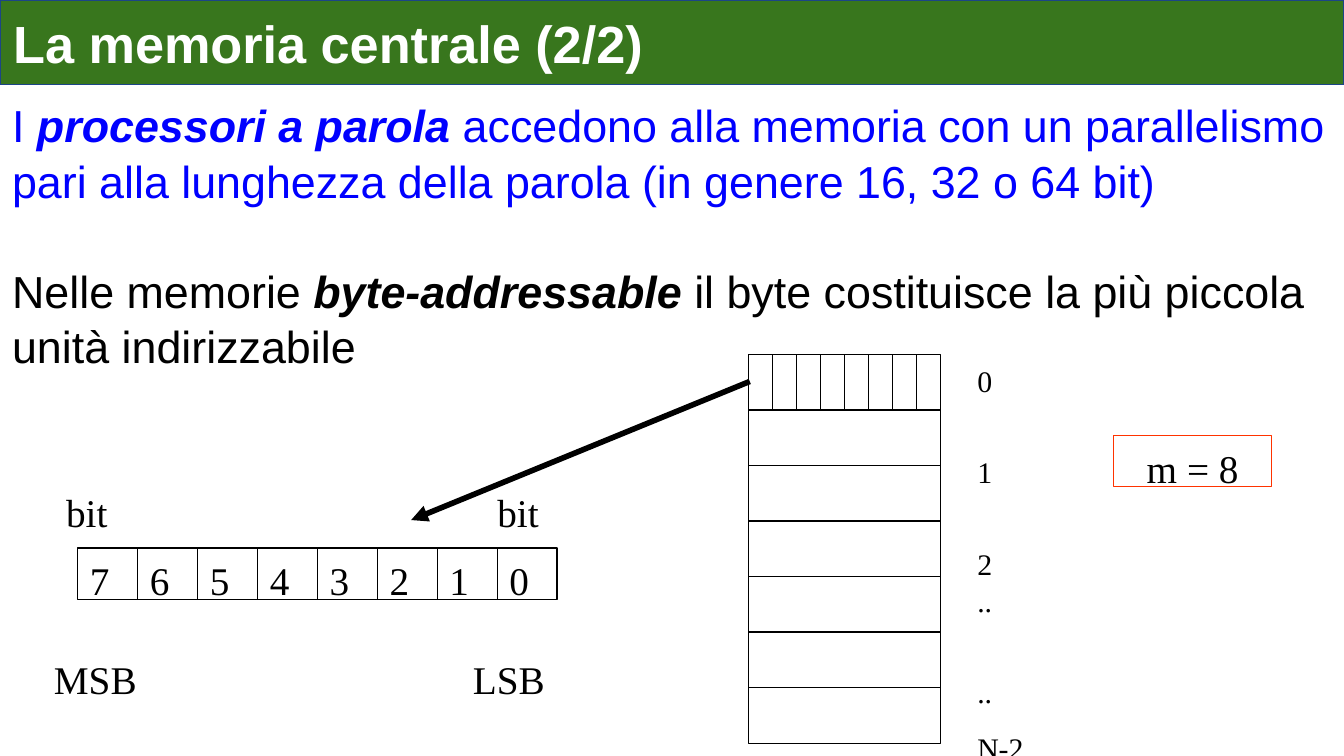
import pptx
import pptx.dml.color
import pptx.enum.shapes
import pptx.enum.text
import pptx.oxml
import pptx.oxml.ns
import pptx.util

Cm = pptx.util.Cm
Pt = pptx.util.Pt
RECTANGLE = pptx.enum.shapes.MSO_SHAPE.RECTANGLE
ALIGN = pptx.enum.text.PP_ALIGN
ANCHOR = pptx.enum.text.MSO_ANCHOR

COLORS = {
    "black": "000000",
    "white": "FFFFFF",
    "blue": "0000FF",
    "green": "38761D",
    "navy": "1C4587",
    "red": "FF3300",
}
TITLE_FONT = {"name": "Arial", "size": Pt(28), "bold": True}
BODY_FONT = {"name": "Arial", "size": Pt(24)}
DIAGRAM_FONT = {"name": "Times New Roman", "size": Pt(21)}
ADDRESS_FONT = {"name": "Times New Roman", "size": Pt(16)}
EMPHASIS = {"bold": True, "italic": True}
FRAME = {
    "word_wrap": True,
    "vertical_anchor": ANCHOR.TOP,
    "margin_left": Cm(0.23),
    "margin_right": Cm(0.23),
    "margin_top": Cm(0.13),
    "margin_bottom": Cm(0.13),
}
TITLE_FRAME = {
    "word_wrap": True,
    "auto_size": pptx.enum.text.MSO_AUTO_SIZE.NONE,
    "vertical_anchor": ANCHOR.MIDDLE,
    "margin_left": Cm(0.25),
    "margin_right": Cm(0.25),
    "margin_top": Cm(0.25),
    "margin_bottom": Cm(0.25),
}


def apply_format(target, values):
    """Set each attribute named in values on the target."""
    for name, value in values.items():
        setattr(target, name, value)


def rgb(color):
    """Return the named colour."""
    return pptx.dml.color.RGBColor.from_string(COLORS[color])


def write_paragraphs(shape, paragraphs, frame=FRAME):
    """Fill a shape with paragraphs given as (format, runs, font, colour)."""
    text_frame = shape.text_frame
    apply_format(text_frame, frame)
    for index, (layout, runs, font, color) in enumerate(paragraphs):
        paragraph = text_frame.add_paragraph() if index else text_frame.paragraphs[0]
        apply_format(paragraph, layout)
        for text, emphasis in runs:
            run = paragraph.add_run()
            run.text = text
            apply_format(run.font, {**font, **emphasis})
            run.font.color.rgb = rgb(color)


def add_cell(slide, box, text="", line="black", align=ALIGN.LEFT):
    """Add an outlined rectangle, with text if there is any."""
    shape = slide.shapes.add_shape(RECTANGLE, *map(Cm, box))
    shape.shadow.inherit = False
    shape.fill.background()
    shape.line.color.rgb = rgb(line)
    shape.line.width = Pt(0.75)
    if text:
        layout = {"alignment": align, "line_spacing": 1.04}
        write_paragraphs(shape, [(layout, [(text, {})], DIAGRAM_FONT, "black")])


def add_text(slide, box, paragraphs):
    """Add a text box holding the paragraphs."""
    write_paragraphs(slide.shapes.add_textbox(*map(Cm, box)), paragraphs)


def add_title(slide, box):
    """Place the title placeholder as a green banner."""
    title = slide.shapes.title
    apply_format(title, dict(zip(("left", "top", "width", "height"), map(Cm, box))))
    title.fill.solid()
    title.fill.fore_color.rgb = rgb("green")
    title.line.color.rgb = rgb("navy")
    title.line.width = Pt(0.75)
    runs = [("La memoria centrale (2/2)", {})]
    layout = {"alignment": ALIGN.LEFT}
    write_paragraphs(title, [(layout, runs, TITLE_FONT, "white")], TITLE_FRAME)


def add_body(slide, box):
    """Add the two statements on memory access."""
    word_runs = [
        ("I ", {}),
        ("processori a parola", EMPHASIS),
        (" accedono alla memoria con un parallelismo pari alla lunghezza "
         "della parola (in genere 16, 32 o 64 bit)", {}),
    ]
    byte_runs = [
        ("Nelle memorie ", {}),
        ("byte-addressable", EMPHASIS),
        (" il byte costituisce la più piccola unità indirizzabile", {}),
    ]
    add_text(slide, box, [
        ({"line_spacing": 1.04}, word_runs, BODY_FONT, "blue"),
        ({"line_spacing": 1.04, "space_before": Pt(28.8)}, byte_runs, BODY_FONT, "black"),
    ])


def add_memory(slide, box, bits=8, rows=7):
    """Draw the memory column, its first byte split into bits, and its addresses."""
    left, top, width, height = box
    bit_width, row_height = width / bits, height / rows
    for bit in range(bits):
        add_cell(slide, (left + bit * bit_width, top, bit_width, row_height))
    for row in range(1, rows):
        add_cell(slide, (left, top + row * row_height, width, row_height))
    addresses = [("0", 0), ("1", 29), ("2", 29), ("..", 0), ("..", 29), ("N-2", 10)]
    add_text(slide, (left + width + 0.46, top, 2.03, height), [
        ({"line_spacing": 1.04, "space_before": Pt(gap)}, [(text, {})], ADDRESS_FONT, "black")
        for text, gap in addresses
    ])


def add_register(slide, box, bits=8):
    """Draw the numbered bits of one byte with the labels of both ends."""
    left, top, width, height = box
    bit_width = width / bits
    for index in range(bits):
        cell = (left + index * bit_width, top, bit_width, height)
        add_cell(slide, cell, str(bits - 1 - index))
    labels = [("bit", -0.45, -1.29), ("bit", 7.7, -1.29),
              ("MSB", -0.68, 1.86), ("LSB", 7.24, 1.86)]
    for text, across, down in labels:
        add_text(slide, (left + across, top + down, 2.5, height),
                 [({"line_spacing": 1.04}, [(text, {})], DIAGRAM_FONT, "black")])


def add_arrow(slide, start, end):
    """Add a thick black arrow from start to end."""
    arrow = slide.shapes.add_connector(
        pptx.enum.shapes.MSO_CONNECTOR.STRAIGHT, *map(Cm, start + end))
    arrow.line.color.rgb = rgb("black")
    arrow.line.width = Pt(3)
    line = arrow.line._get_or_add_ln()
    head = pptx.oxml.parse_xml(
        f'<a:tailEnd {pptx.oxml.ns.nsdecls("a")} type="triangle"/>')
    line.append(head)
    line.addnext(pptx.oxml.parse_xml(f'<a:effectLst {pptx.oxml.ns.nsdecls("a")}/>'))


def main():
    """Build and save the slide."""
    presentation = pptx.Presentation()
    presentation.slide_width = Cm(25.4)
    presentation.slide_height = Cm(14.29)
    slide = presentation.slides.add_slide(presentation.slide_layouts[5])
    add_title(slide, (0, 0, 25.4, 1.6))
    add_memory(slide, (14.15, 6.7, 3.63, 7.35))
    add_arrow(slide, (14.17, 7.21), (7.77, 9.83))
    add_register(slide, (1.47, 10.36, 9.06, 0.97))
    add_cell(slide, (21.05, 8.23, 2.98, 0.97), "m = 8", "red", ALIGN.CENTER)
    add_body(slide, (0, 1.68, 25.4, 4.65))
    presentation.save("out.pptx")


if __name__ == "__main__":
    main()
